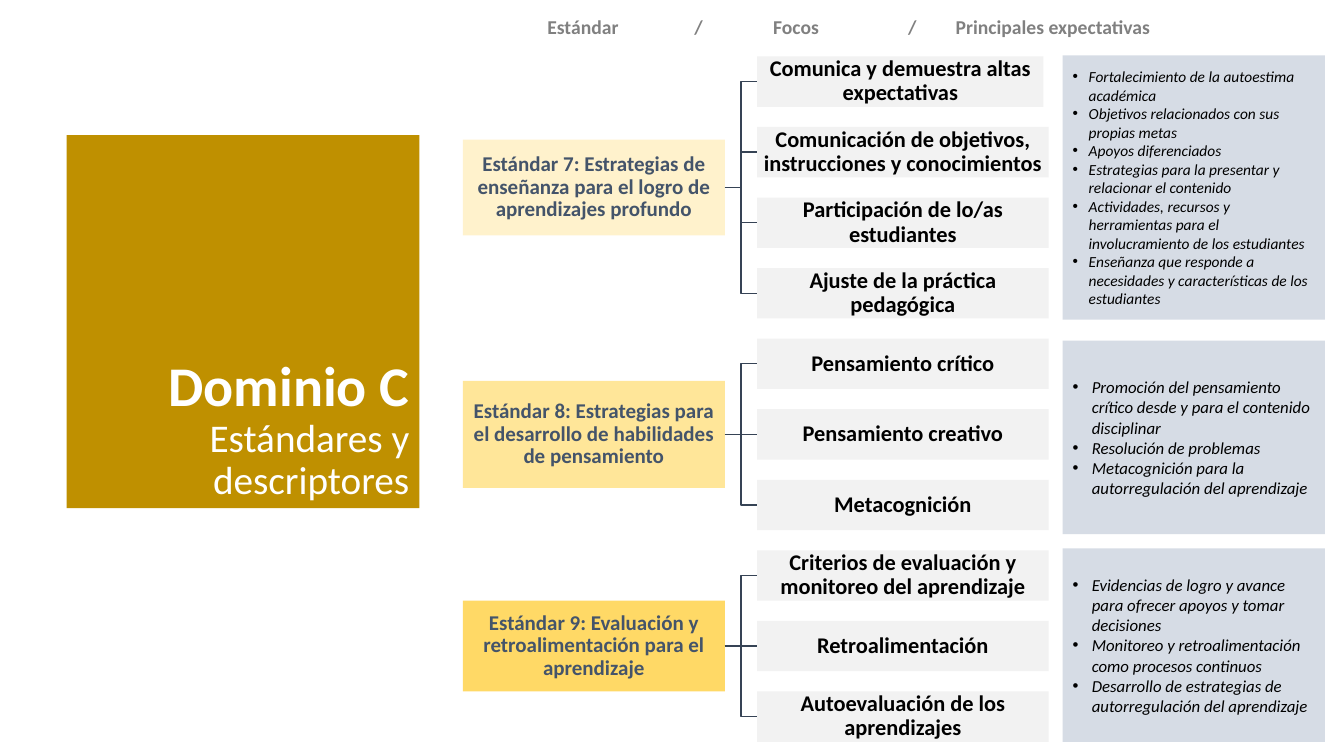
from lxml.etree import SubElement
from pptx import Presentation
from pptx.dml.color import RGBColor
from pptx.enum.shapes import MSO_CONNECTOR, MSO_SHAPE
from pptx.enum.text import MSO_ANCHOR, MSO_AUTO_SIZE, PP_ALIGN
from pptx.oxml.ns import qn
from pptx.util import Inches, Pt

FONT = "Calibri"
TITLE = [("Dominio C", 40, True), ("Estándares y descriptores", 28, False)]
HEADS = ["Estándar", "/", "Focos", "/", "Principales expectativas"]
TABS = [1.46, 2.24, 3.58, 4.05]

# One entry per standard: text, fill, height, focuses, (top, height, size, indent), expectations
GROUPS = [
    ("Estándar 7: Estrategias de enseñanza para el logro de aprendizajes profundo",
     "FFF2CC", 0.95,
     ["Comunica y demuestra altas expectativas",
      "Comunicación de objetivos, instrucciones y conocimientos",
      "Participación de lo/as estudiantes",
      "Ajuste de la práctica pedagógica"],
     (0.55, 2.62, 11, 0.16),
     ["Fortalecimiento de la autoestima académica",
      "Objetivos relacionados con sus propias metas",
      "Apoyos diferenciados",
      "Estrategias para la presentar y relacionar el contenido",
      "Actividades, recursos y herramientas para el involucramiento de los estudiantes",
      "Enseñanza que responde a necesidades y características de los estudiantes"]),
    ("Estándar 8: Estrategias para el desarrollo de habilidades de pensamiento",
     "FFE699", 1.06,
     ["Pensamiento crítico", "Pensamiento creativo", "Metacognición"],
     (3.38, 1.92, 12, 0.19),
     ["Promoción del pensamiento crítico desde y para el contenido disciplinar",
      "Resolución de problemas",
      "Metacognición para la autorregulación del aprendizaje"]),
    ("Estándar 9: Evaluación y retroalimentación para el aprendizaje",
     "FFD966", 0.9,
     ["Criterios de evaluación y monitoreo del aprendizaje",
      "Retroalimentación",
      "Autoevaluación de los aprendizajes"],
     (5.44, 1.92, 12, 0.19),
     ["Evidencias de logro y avance para ofrecer apoyos y tomar decisiones",
      "Monitoreo y retroalimentación como procesos continuos",
      "Desarrollo de estrategias de autorregulación del aprendizaje"]),
]

STD_X, STD_W = 4.59, 2.6
FOCUS_X, FOCUS_W, FOCUS_H = 7.51, 2.89, 0.5
FIRST_W = 2.84
FOCUS_TOP, STEP = 0.56, 0.7
LIST_X, LIST_W = 10.54, 2.6


def color(code):
    return RGBColor.from_string(code)


def write(para, text, size, code, bold=False, italic=False):
    run = para.add_run()
    run.text = text
    font = run.font
    font.name, font.size = FONT, Pt(size)
    font.bold, font.italic = bold, italic
    font.color.rgb = color(code)


def block(slide, x, y, w, h, fill):
    """Add a plain filled rectangle with wrapped, vertically centred text."""
    shape = slide.shapes.add_shape(
        MSO_SHAPE.RECTANGLE, Inches(x), Inches(y), Inches(w), Inches(h))
    shape.shadow.inherit = False
    shape.fill.solid()
    shape.fill.fore_color.rgb = color(fill)
    shape.line.fill.background()
    shape.text_frame.word_wrap = True
    shape.text_frame.vertical_anchor = MSO_ANCHOR.MIDDLE
    return shape


def label(slide, x, y, w, h, fill, text, size, code):
    """Add a block with one bold centred paragraph."""
    shape = block(slide, x, y, w, h, fill)
    frame = shape.text_frame
    frame.margin_left = frame.margin_right = Inches(0.01)
    frame.margin_top = frame.margin_bottom = Inches(0.01)
    para = frame.paragraphs[0]
    para.alignment = PP_ALIGN.CENTER
    para.line_spacing = 0.9
    write(para, text, size, code, bold=True)
    return shape


def link(slide, start, end, kind):
    """Join the right side of start to the left side of end."""
    line = slide.shapes.add_connector(kind, 0, 0, 0, 0)
    line.begin_connect(start, 3)
    line.end_connect(end, 1)
    line.line.color.rgb = color("364355")
    line.line.width = Pt(1)
    SubElement(line._element.spPr, qn("a:effectLst"))


def bullets(slide, box, items):
    top, height, size, indent = box
    frame = block(slide, LIST_X, top, LIST_W, height, "D6DCE5").text_frame
    for n, item in enumerate(items):
        para = frame.add_paragraph() if n else frame.paragraphs[0]
        para.alignment = PP_ALIGN.LEFT
        props = para._p.get_or_add_pPr()
        props.set("marL", str(Inches(indent)))
        props.set("indent", str(-Inches(indent)))
        SubElement(props, qn("a:buFont"), typeface="Arial")
        SubElement(props, qn("a:buChar"), char="•")
        write(para, item, size, "000000", italic=True)


def heading(slide):
    box = slide.shapes.add_textbox(Inches(5.33), Inches(0.1), Inches(8), Inches(0.34))
    frame = box.text_frame
    frame.word_wrap = True
    frame.auto_size = MSO_AUTO_SIZE.SHAPE_TO_FIT_TEXT
    para = frame.paragraphs[0]
    stops = SubElement(para._p.get_or_add_pPr(), qn("a:tabLst"))
    for tab in TABS:
        SubElement(stops, qn("a:tab"), pos=str(Inches(tab)), algn="l")
    write(para, "\t".join(HEADS), 14, "808080", bold=True)


def banner(slide):
    title = slide.shapes.title
    title.left, title.top = Inches(0.66), Inches(1.34)
    title.width, title.height = Inches(3.5), Inches(3.7)
    title.fill.solid()
    title.fill.fore_color.rgb = color("BF9000")
    frame = title.text_frame
    frame.word_wrap = True
    frame.auto_size = MSO_AUTO_SIZE.NONE
    frame.vertical_anchor = MSO_ANCHOR.BOTTOM
    para = frame.paragraphs[0]
    para.alignment = PP_ALIGN.RIGHT
    para.line_spacing = 0.9
    for n, (text, size, bold) in enumerate(TITLE):
        if n:
            para.add_line_break()
        write(para, text, size, "FFFFFF", bold)


def main():
    deck = Presentation()
    deck.slide_width, deck.slide_height = Inches(13.33), Inches(7.5)
    slide = deck.slides.add_slide(deck.slide_layouts[5])
    banner(slide)
    row = 0
    for text, fill, height, topics, box, items in GROUPS:
        count = len(topics)
        mid = FOCUS_TOP + (row + (count - 1) / 2) * STEP + FOCUS_H / 2
        std = label(slide, STD_X, mid - height / 2, STD_W, height, fill,
                    text, 15, "44546A")
        for n, topic in enumerate(topics):
            width = FOCUS_W if row else FIRST_W
            focus = label(slide, FOCUS_X, FOCUS_TOP + row * STEP, width, FOCUS_H,
                          "F2F2F2", topic, 16, "000000")
            level = 2 * n == count - 1
            link(slide, std, focus,
                 MSO_CONNECTOR.STRAIGHT if level else MSO_CONNECTOR.ELBOW)
            row += 1
        bullets(slide, box, items)
    heading(slide)
    deck.save("out.pptx")


if __name__ == "__main__":
    main()
